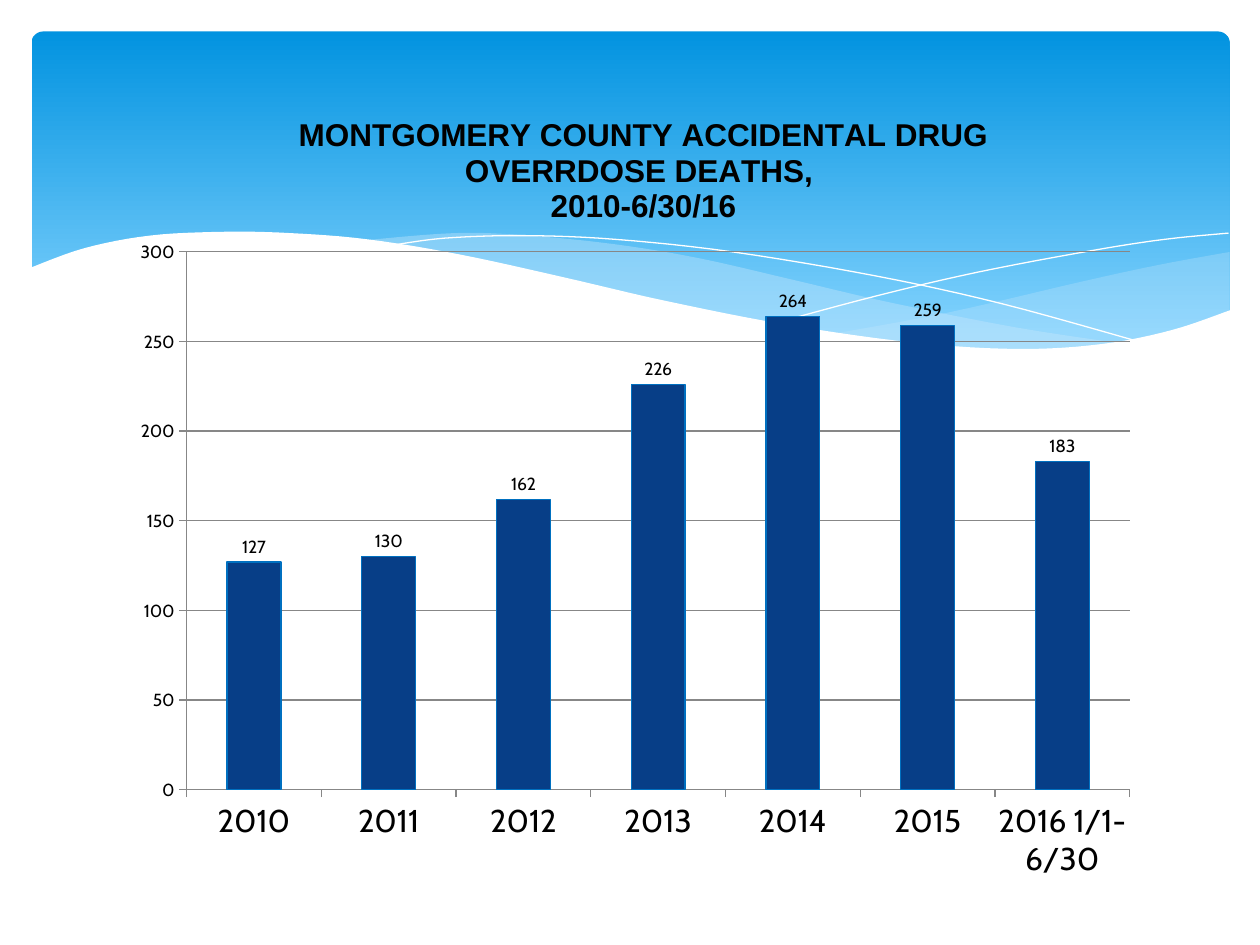
from lxml import etree
from pptx import Presentation, util as u
from pptx.chart.data import CategoryChartData
from pptx.dml.color import RGBColor
from pptx.enum import chart as ch, shapes
from pptx.oxml import parse_xml
from pptx.oxml.ns import nsdecls, qn

COLORS = {"sky": "0293E0", "pale": "83D3FE", "mist": "C6E7FC", "white": "FFFFFF",
          "bar": "073E87", "edge": "0070C0", "grid": "878787", "text": "000000"}

RIGHT_WAVE = [
    [(9.76, 2), (9.21, 2.1), (8.61, 2.23), (7.53, 2.48), (6.61, 2.65)],
    [(6.61, 2.65), (7.19, 2.72), (7.81, 2.77), (8.35, 2.77), (8.89, 2.72), (9.35, 2.62), (9.76, 2.47)]]
LONG_WAVE = [
    [(8.93, 2.73), (8.07, 2.6), (7.06, 2.4), (6.29, 2.22), (5.55, 2.05), (4.89, 1.94),
     (4.2, 1.87), (3.61, 1.85), (2.86, 1.91)],
    [(2.86, 1.91), (3.62, 2.03), (4.49, 2.22), (5.3, 2.4), (6.18, 2.58), (6.95, 2.7),
     (7.61, 2.77), (8.28, 2.78), (8.93, 2.73)]]
FALLING_LINE = [[(3.09, 1.95), (3.53, 1.89), (4.16, 1.87), (4.89, 1.9), (5.82, 2),
                 (6.95, 2.19), (7.95, 2.41), (9.07, 2.72)]]
RISING_LINE = [[(6.13, 2.57), (6.95, 2.35), (7.76, 2.16), (8.66, 1.99), (9.24, 1.9), (9.75, 1.85)]]
WHITE_WAVE = [
    [(9.77, 2.46), (9.3, 2.62), (8.75, 2.73), (8.09, 2.77), (7.26, 2.72), (6.26, 2.58),
     (5.29, 2.39), (4.47, 2.2), (3.65, 2.02), (2.92, 1.9), (2.3, 1.85), (1.77, 1.84),
     (1.19, 1.87), (0.67, 1.97), (0.23, 2.13)],
    [(0.23, 3.29), (9.77, 3.29)]]
DEATHS = {"2010": 127, "2011": 130, "2012": 162, "2013": 226,
          "2014": 264, "2015": 259, "2016 1/1-6/30": 183}
TITLE = ["MONTGOMERY COUNTY ACCIDENTAL DRUG OVERRDOSE DEATHS, ", "2010-6/30/16"]


def rgb(name):
    return RGBColor.from_string(COLORS[name])


def smooth(pts, steps=6):
    if len(pts) < 3:
        return pts
    padded = [pts[0], *pts, pts[-1]]
    curve = [pts[0]]
    for a, b, c, d in zip(padded, padded[1:], padded[2:], padded[3:]):
        for i in range(1, steps + 1):
            t = i / steps
            curve.append(tuple(
                (2 * q + (r - p) * t + (2 * p - 5 * q + 4 * r - v) * t ** 2
                 + (3 * q - p - 3 * r + v) * t ** 3) / 2
                for p, q, r, v in zip(a, b, c, d)))
    return curve


def place(el, index, **fractions):
    for old in el.findall(qn("c:layout")):
        el.remove(old)
    target = '<c:layoutTarget val="inner"/>' if "w" in fractions else ""
    modes = "".join(f'<c:{k}Mode val="edge"/>' for k in "xy")
    values = "".join(f'<c:{k} val="{v}"/>' for k, v in fractions.items())
    el.insert(index, parse_xml(f'<c:layout {nsdecls("c")}><c:manualLayout>{target}{modes}{values}'
                               '</c:manualLayout></c:layout>'))


class Deck:
    """Holds the chart style and the current slide."""

    font, heading = "Cabin", "Arial"

    def __init__(self, slide):
        self.s = slide

    def banner(self, x, y, w, h):
        sp = self.s.shapes.add_shape(shapes.MSO_SHAPE.ROUNDED_RECTANGLE, *map(u.Inches, (x, y, w, h)))
        sp.adjustments[0] = 0.034
        sp.shadow.inherit = False
        sp.line.fill.background()
        sp.fill.gradient()
        sp.fill.gradient_angle = 270
        for stop, pos, name in zip(sp.fill.gradient_stops, (0, 0.9), ("sky", "pale")):
            stop.position = pos
            stop.color.rgb = rgb(name)

    def wave(self, curves, fill=None, alpha=100):
        pts = [(u.Inches(x), u.Inches(y)) for c in curves for x, y in smooth(c)]
        fb = self.s.shapes.build_freeform(*pts[0])
        fb.add_line_segments(pts[1:], close=fill is not None)
        sp = fb.convert_to_shape()
        sp.shadow.inherit = False
        if fill is None:
            sp.fill.background()
            sp.line.color.rgb = rgb("white")
            sp.line.width = u.Pt(0)
            return
        sp.line.fill.background()
        sp.fill.solid()
        sp.fill.fore_color.rgb = rgb(fill)
        if alpha < 100:
            clr = sp.fill._xPr.find(".//" + qn("a:srgbClr"))
            etree.SubElement(clr, qn("a:alpha")).set("val", str(alpha * 1000))

    def columns(self, x, y, w, h, values, title):
        data = CategoryChartData()
        data.categories = list(values)
        data.add_series("Series 1", list(values.values()))
        chart = self.s.shapes.add_chart(ch.XL_CHART_TYPE.COLUMN_CLUSTERED,
                                        *map(u.Inches, (x, y, w, h)), data).chart
        chart.has_legend = False
        chart.font.name, chart.font.size = self.font, u.Pt(10)
        chart.font.color.rgb = rgb("text")
        self.title(chart, title)
        place(chart._chartSpace.chart.plotArea, 0, x=0.065, y=0.208, w=0.915, h=0.663)

        plot = chart.plots[0]
        plot.gap_width, plot.vary_by_categories = 150, False
        plot.has_data_labels = True
        plot.data_labels.show_value = True
        plot.data_labels.position = ch.XL_LABEL_POSITION.OUTSIDE_END
        fmt = plot.series[0].format
        fmt.fill.solid()
        fmt.fill.fore_color.rgb = rgb("bar")
        fmt.line.color.rgb = rgb("edge")
        fmt.line.width = u.Pt(0.75)

        cat, val = chart.category_axis, chart.value_axis
        cat.tick_labels.font.size = u.Pt(18)
        val.minimum_scale, val.maximum_scale, val.major_unit = 0, 300, 50
        val.has_major_gridlines = True
        for line in (cat.format.line, val.format.line, val.major_gridlines.format.line):
            line.color.rgb = rgb("grid")
            line.width = u.Pt(0.75)
        for axis in (cat, val):
            axis.major_tick_mark = ch.XL_TICK_MARK.OUTSIDE

    def title(self, chart, lines):
        chart.has_title = True
        tf = chart.chart_title.text_frame
        for i, line in enumerate(lines):
            p = tf.add_paragraph() if i else tf.paragraphs[0]
            r = p.add_run()
            r.text = line
            r.font.name, r.font.size, r.font.bold = self.heading, u.Pt(18), True
            r.font.color.rgb = rgb("text")
        place(chart.chart_title._element, 1, x=0.17, y=0.035)


def main():
    prs = Presentation()
    prs.slide_width, prs.slide_height = u.Inches(10), u.Inches(7.5)
    deck = Deck(prs.slides.add_slide(prs.slide_layouts[6]))
    deck.banner(0.25, 0.25, 9.51, 2.7)
    deck.wave(RIGHT_WAVE, "mist", 29)
    deck.wave(LONG_WAVE, "mist", 40)
    deck.wave(FALLING_LINE)
    deck.wave(RISING_LINE)
    deck.wave(WHITE_WAVE, "white")
    deck.columns(0.95, 0.66, 8.18, 6.44, DEATHS, TITLE)
    prs.save("out.pptx")


if __name__ == "__main__":
    main()
